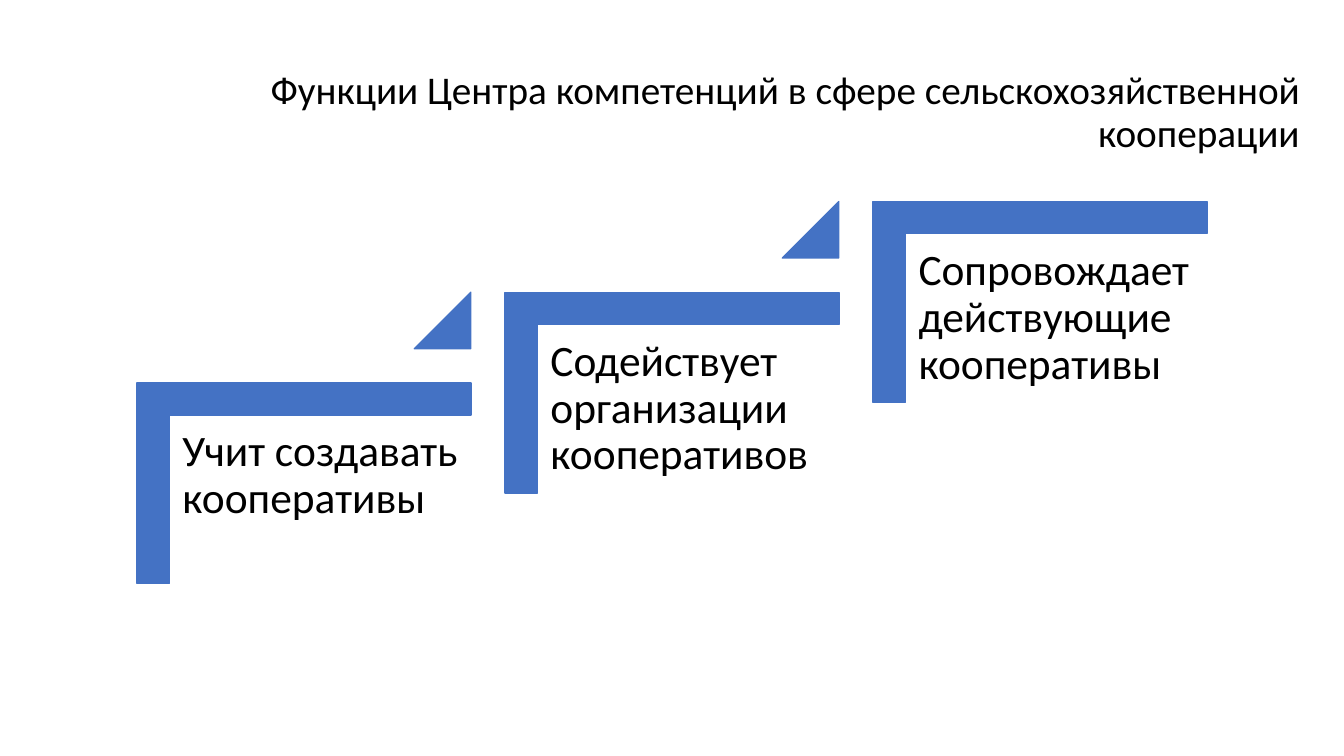
from pptx import Presentation
from pptx.dml.color import RGBColor
from pptx.enum.shapes import MSO_SHAPE
from pptx.enum.text import MSO_ANCHOR, PP_ALIGN
from pptx.util import Inches, Pt

TITLE = "Функции Центра компетенций в сфере сельскохозяйственной кооперации"
STEPS = [
    "Учит создавать кооперативы",
    "Содействует организации кооперативов",
    "Сопровождает действующие кооперативы",
]

BLUE = RGBColor(0x44, 0x72, 0xC4)
BLACK = RGBColor(0, 0, 0)
FONT = "Calibri"
CORNER, TRIANGLE = MSO_SHAPE.CORNER, MSO_SHAPE.RIGHT_TRIANGLE
TRIANGLE = MSO_SHAPE.ISOSCELES_TRIANGLE
MIDDLE, TOP = MSO_ANCHOR.MIDDLE, MSO_ANCHOR.TOP
LEFT, RIGHT = PP_ALIGN.LEFT, PP_ALIGN.RIGHT

# Inches: each step moves right by RUN and up by RISE
RUN, RISE = 3.65, 0.9
CORNER_BOX = (2.02, 3.14, 1.99, 3.31)
TEXT_BOX = (1.68, 4.13, 2.99, 2.62)
TRIANGLE_BOX = (4.11, 2.9, 0.56, 0.56)
TEXT_INSET = 0.13


def step_box(box, step):
    """Shift a first-step box to the given step of the staircase."""
    left, top, width, height = box
    return [Inches(value) for value in
            (left + step * RUN, top - step * RISE, width, height)]


def add_blue_shape(slide, kind, box, adjustments, rotation=0):
    shape = slide.shapes.add_shape(kind, *box)
    shape.rotation = rotation
    for index, value in enumerate(adjustments):
        shape.adjustments[index] = value
    shape.fill.solid()
    shape.fill.fore_color.rgb = BLUE
    shape.line.color.rgb = BLUE
    shape.line.width = Pt(1)
    shape.shadow.inherit = False


def write_text(frame, text, size, alignment, anchor):
    frame.word_wrap = True
    frame.vertical_anchor = anchor
    paragraph = frame.paragraphs[0]
    paragraph.text = text
    paragraph.alignment = alignment
    paragraph.line_spacing = 0.9
    paragraph.font.name = FONT
    paragraph.font.size = Pt(size)
    paragraph.font.color.rgb = BLACK


def add_step_text(slide, text, box):
    frame = slide.shapes.add_textbox(*box).text_frame
    frame.margin_left = frame.margin_right = Inches(TEXT_INSET)
    frame.margin_top = frame.margin_bottom = Inches(TEXT_INSET)
    write_text(frame, text, 31, LEFT, TOP)


def main():
    presentation = Presentation()
    presentation.slide_width = Inches(13.33)
    presentation.slide_height = Inches(7.5)
    slide = presentation.slides.add_slide(presentation.slide_layouts[5])

    title = slide.shapes.title
    title.left, title.top = Inches(1.49), Inches(0.4)
    title.width, title.height = Inches(11.5), Inches(1.45)
    write_text(title.text_frame, TITLE, 28, RIGHT, MIDDLE)

    for step, text in enumerate(STEPS):
        add_blue_shape(slide, CORNER, step_box(CORNER_BOX, step), (0.16, 0.16), 90)
        add_step_text(slide, text, step_box(TEXT_BOX, step))
        if step < len(STEPS) - 1:
            add_blue_shape(slide, TRIANGLE, step_box(TRIANGLE_BOX, step), (1,))

    presentation.save("out.pptx")


if __name__ == "__main__":
    main()
